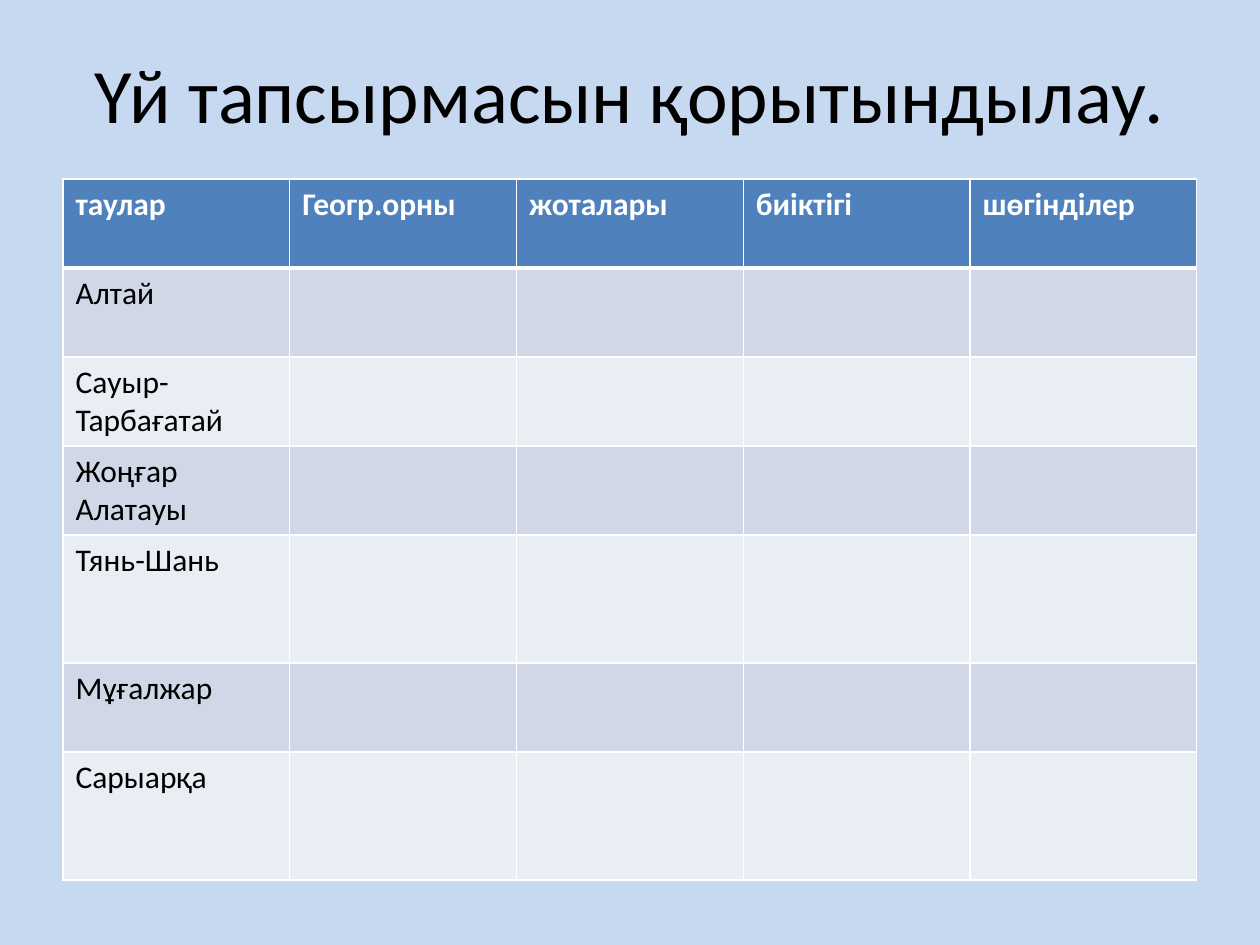
from lxml import etree
from pptx import Presentation
from pptx import util as u
from pptx.dml.color import RGBColor
from pptx.enum import text
from pptx.oxml.ns import qn

PX = u.Inches(1) // 126
FONT = "Calibri"
COLORS = {
    "background": "C6D9F1",
    "header": "4F81BD",
    "odd": "D0D8E8",
    "even": "E9EDF4",
    "light": "FFFFFF",
    "dark": "000000",
}
HEADINGS = ["таулар", "Геогр.орны", "жоталары", "биіктігі", "шөгінділер"]
MOUNTAINS = ["Алтай", "Сауыр-Тарбағатай", "Жоңғар Алатауы",
             "Тянь-Шань", "Мұғалжар", "Сарыарқа"]
SHORT_ROW, TALL_ROW = 89, 128
TALL_MOUNTAINS = {"Тянь-Шань", "Сарыарқа"}


def color(name):
    return RGBColor.from_string(COLORS[name])


def box_emu(box):
    return [length * PX for length in box]


def style_paragraph(paragraph, size, color_name, bold=False):
    font = paragraph.font
    font.name = FONT
    font.size = u.Pt(size)
    font.bold = bold
    font.color.rgb = color(color_name)


def add_title(slide, box, wording):
    frame = slide.shapes.add_textbox(*box_emu(box)).text_frame
    frame.word_wrap = True
    frame.vertical_anchor = text.MSO_ANCHOR.MIDDLE
    paragraph = frame.paragraphs[0]
    paragraph.text = wording
    paragraph.alignment = text.PP_ALIGN.CENTER
    style_paragraph(paragraph, 44, "dark")


def set_borders(cell, bottom, top):
    properties = cell._tc.get_or_add_tcPr()
    widths = {"a:lnL": 1, "a:lnR": 1, "a:lnT": top, "a:lnB": bottom}
    for position, (tag, width) in enumerate(widths.items()):
        line = etree.Element(qn(tag), w=str(u.Pt(width)))
        fill = etree.SubElement(line, qn("a:solidFill"))
        etree.SubElement(fill, qn("a:srgbClr"), val=COLORS["light"])
        properties.insert(position, line)


def add_mountain_table(slide, box):
    row_count, column_count = len(MOUNTAINS) + 1, len(HEADINGS)
    table = slide.shapes.add_table(row_count, column_count, *box_emu(box)).table
    for column in table.columns:
        column.width = box[2] * PX // column_count
    rows = [HEADINGS] + [[name] + [""] * (column_count - 1) for name in MOUNTAINS]
    for row_index, wordings in enumerate(rows):
        is_header = row_index == 0
        is_tall = wordings[0] in TALL_MOUNTAINS
        table.rows[row_index].height = (TALL_ROW if is_tall else SHORT_ROW) * PX
        fill_name = "header" if is_header else "odd" if row_index % 2 else "even"
        for column_index, wording in enumerate(wordings):
            cell = table.cell(row_index, column_index)
            cell.text = wording
            cell.fill.solid()
            cell.fill.fore_color.rgb = color(fill_name)
            set_borders(cell, bottom=3 if is_header else 1,
                        top=3 if row_index == 1 else 1)
            style_paragraph(cell.text_frame.paragraphs[0], 18,
                            "light" if is_header else "dark", is_header)


def main():
    presentation = Presentation()
    presentation.slide_width = 1260 * PX
    presentation.slide_height = 945 * PX
    slide = presentation.slides.add_slide(presentation.slide_layouts[6])
    slide.background.fill.solid()
    slide.background.fill.fore_color.rgb = color("background")
    add_title(slide, (63, 38, 1134, 110), "Үй тапсырмасын қорытындылау.")
    add_mountain_table(slide, (63, 179, 1134, 701))
    presentation.save("out.pptx")


if __name__ == "__main__":
    main()
